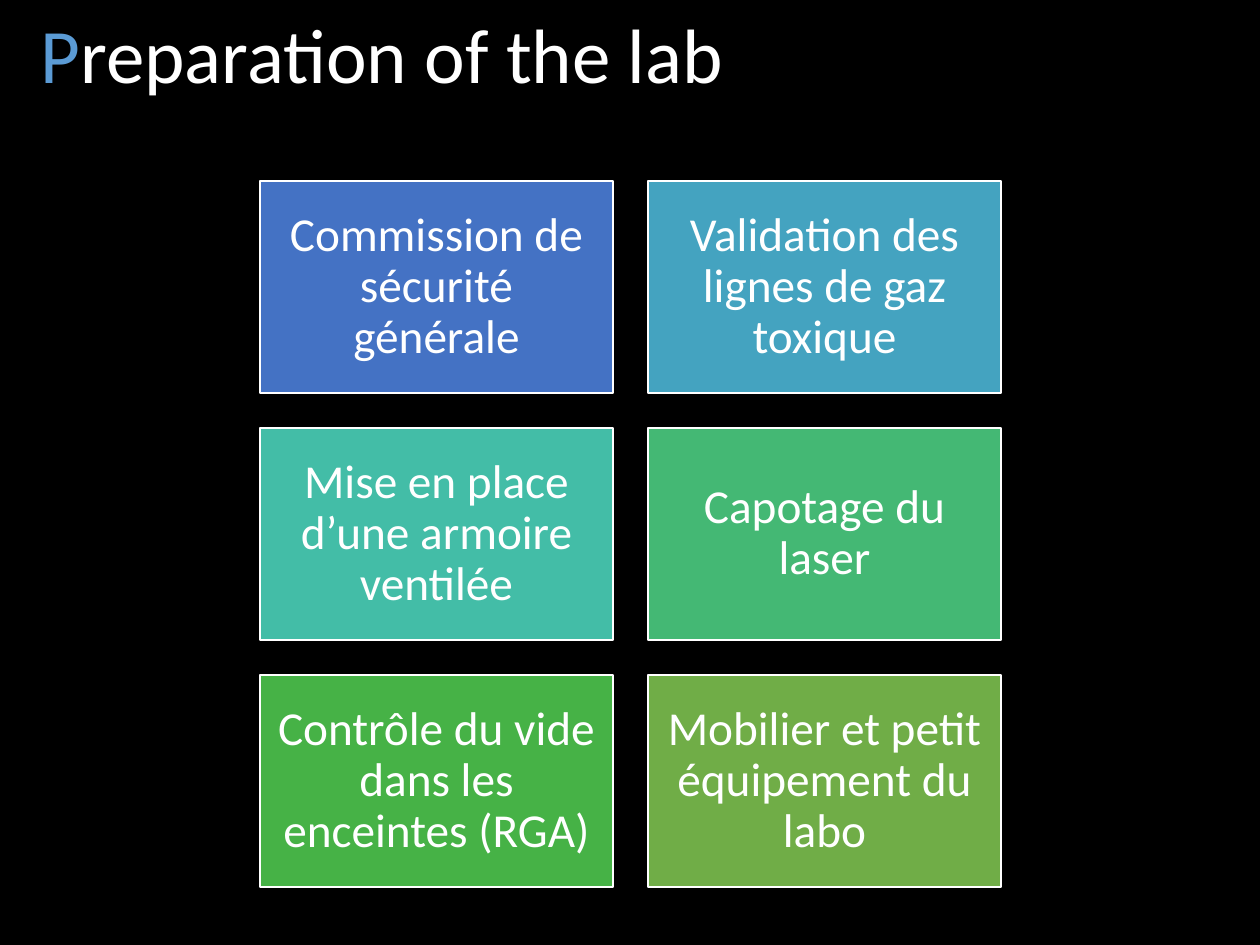
from pptx import Presentation
from pptx.dml.color import RGBColor
from pptx.enum.shapes import MSO_SHAPE
from pptx.enum.text import MSO_ANCHOR, MSO_AUTO_SIZE, PP_ALIGN
from pptx.util import Pt

EMU_PER_PX = 914400 // 126
FONT = "Calibri"
WHITE = "FFFFFF"
COLUMNS = 2
LEFT, TOP = 260, 181
WIDTH, HEIGHT, GAP = 353, 212, 35
INSET = 14
TASKS = [
    ("Commission de sécurité générale", "4472C4"),
    ("Validation des lignes de gaz toxique", "44A3C0"),
    ("Mise en place d’une armoire ventilée", "43BDA7"),
    ("Capotage du laser", "44B874"),
    ("Contrôle du vide dans les enceintes (RGA)", "46B246"),
    ("Mobilier et petit équipement du labo", "70AD47"),
]


def px(length):
    return length * EMU_PER_PX


def color(hex_string):
    return RGBColor.from_string(hex_string)


def format_run(run, size, hex_string):
    run.font.name = FONT
    run.font.size = Pt(size)
    run.font.color.rgb = color(hex_string)


def set_background(slide, hex_string):
    fill = slide.background.fill
    fill.solid()
    fill.fore_color.rgb = color(hex_string)


def add_title(slide, parts):
    title = slide.shapes.title
    title.left, title.top = px(28), px(0)
    title.width, title.height = px(1086), px(118)
    text_frame = title.text_frame
    text_frame.auto_size = MSO_AUTO_SIZE.NONE
    text_frame.vertical_anchor = MSO_ANCHOR.MIDDLE
    paragraph = text_frame.paragraphs[0]
    paragraph.alignment = PP_ALIGN.LEFT
    paragraph.line_spacing = 0.9
    for text, hex_string in parts:
        run = paragraph.add_run()
        run.text = text
        format_run(run, 44, hex_string)


def add_task(slide, left, top, text, hex_string):
    shape = slide.shapes.add_shape(
        MSO_SHAPE.RECTANGLE, px(left), px(top), px(WIDTH), px(HEIGHT)
    )
    shape.shadow.inherit = False
    shape.fill.solid()
    shape.fill.fore_color.rgb = color(hex_string)
    shape.line.color.rgb = color(WHITE)
    shape.line.width = Pt(1)
    text_frame = shape.text_frame
    text_frame.text = text
    text_frame.word_wrap = True
    text_frame.vertical_anchor = MSO_ANCHOR.MIDDLE
    text_frame.margin_left = text_frame.margin_right = px(INSET)
    text_frame.margin_top = text_frame.margin_bottom = px(INSET)
    paragraph = text_frame.paragraphs[0]
    paragraph.alignment = PP_ALIGN.CENTER
    paragraph.line_spacing = 0.9
    format_run(paragraph.runs[0], 27, WHITE)


def main():
    presentation = Presentation()
    presentation.slide_width = px(1260)
    presentation.slide_height = px(945)
    slide = presentation.slides.add_slide(presentation.slide_layouts[5])
    set_background(slide, "000000")
    add_title(slide, [("P", "5B9BD5"), ("reparation of the lab", WHITE)])
    for index, (text, hex_string) in enumerate(TASKS):
        row, column = divmod(index, COLUMNS)
        left = LEFT + column * (WIDTH + GAP)
        top = TOP + row * (HEIGHT + GAP)
        add_task(slide, left, top, text, hex_string)
    presentation.save("out.pptx")


if __name__ == "__main__":
    main()
